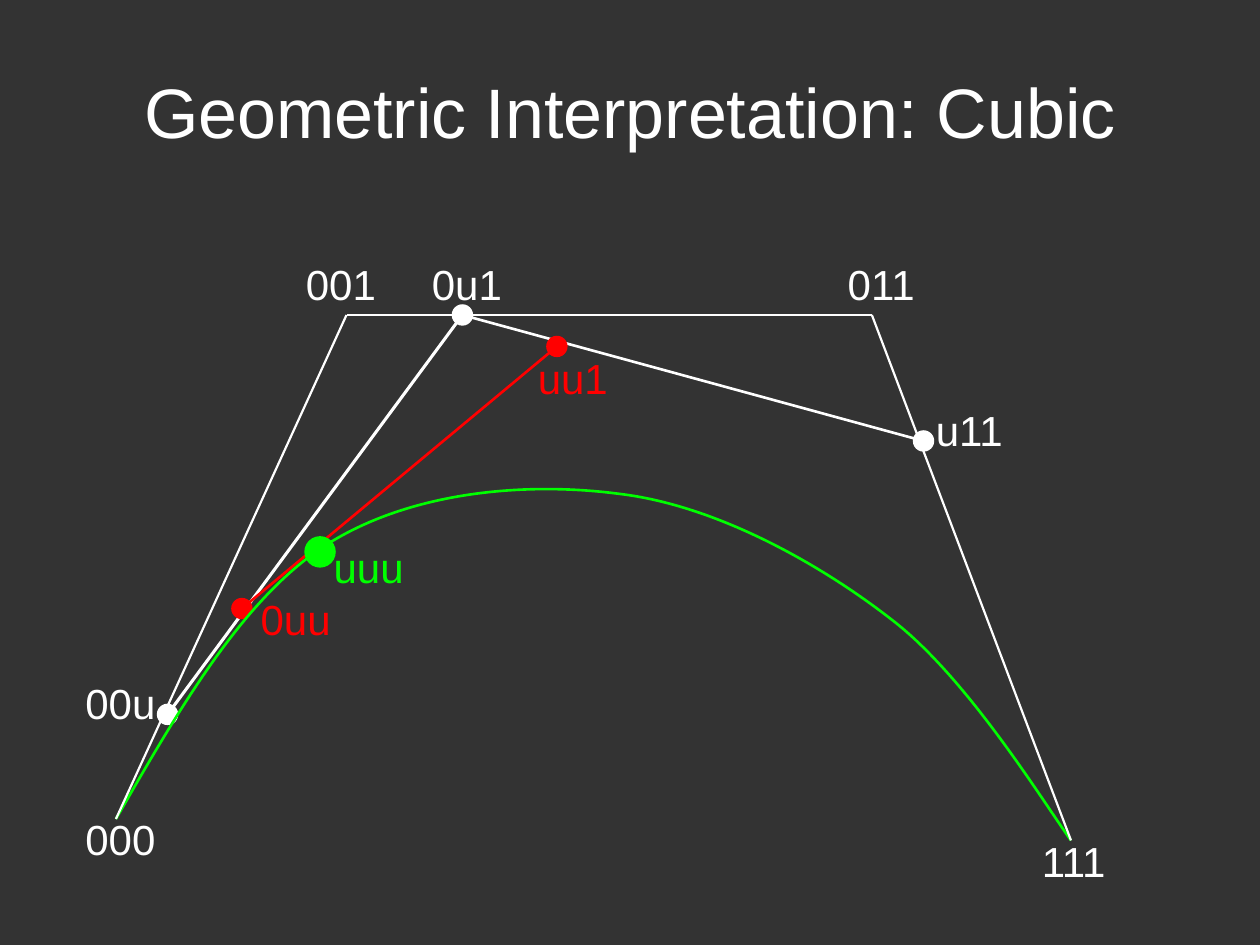
import pptx
import pptx.util
import pptx.dml.color
import pptx.enum.shapes
import pptx.enum.text
import pptx.oxml.ns
import lxml.etree

WHITE, RED, GREEN, DARK = "FFFFFF", "FF0000", "00FF00", "333333"
FONT = "Arial"
TITLE = "Geometric Interpretation: Cubic"

# Blossom points of the cubic, in inches
PTS = {
    "000": (0.92, 6.5), "001": (2.75, 2.5), "011": (6.92, 2.5), "111": (8.5, 6.67),
    "00u": (1.33, 5.67), "0u1": (3.67, 2.5), "u11": (7.33, 3.5),
    "0uu": (1.92, 4.83), "uu1": (4.42, 2.75), "uuu": (2.54, 4.38),
}

# Left top corner of each label
TAGS = {
    "000": (0.58, 6.41), "001": (2.33, 2), "011": (6.63, 2), "111": (8.17, 6.58),
    "00u": (0.58, 5.33), "0u1": (3.33, 2), "u11": (7.33, 3.16),
    "0uu": (1.97, 4.66), "uu1": (4.17, 2.75), "uuu": (2.55, 4.25),
}

# Start point, then two handles and an end for each Bezier piece
CURVE = [
    PTS["000"],
    (1.42, 5.63), (1.92, 4.76), (2.58, 4.33),
    (3.25, 3.9), (4.17, 3.82), (4.92, 3.92),
    (5.67, 4.01), (6.49, 4.46), (7.08, 4.92),
    (7.68, 5.38), (8.29, 6.38), PTS["111"],
]

# Levels from back to front: names, colour, line widths, dot size
LEVELS = [
    (["00u", "0u1", "u11"], WHITE, [1.75, 1.5], 0.17),
    (["0uu", "uu1"], RED, [1.5], 0.17),
    (["uuu"], GREEN, [], 0.25),
    (["000", "001", "011", "111"], WHITE, [1.25] * 3, 0),
]

inch = pptx.util.Inches
qn = pptx.oxml.ns.qn


def rgb(hue):
    return pptx.dml.color.RGBColor.from_string(hue)


def add_text(slide, text, box, size, hue, title=False):
    frame = slide.shapes.add_textbox(*map(inch, box)).text_frame
    frame.word_wrap = title
    para = frame.paragraphs[0]
    if title:
        frame.vertical_anchor = pptx.enum.text.MSO_ANCHOR.MIDDLE
        para.alignment = pptx.enum.text.PP_ALIGN.CENTER
    run = para.add_run()
    run.text = text
    run.font.name = FONT
    run.font.size = pptx.util.Pt(size)
    run.font.color.rgb = rgb(hue)


def add_line(slide, start, end, hue, width):
    line = slide.shapes.add_connector(
        pptx.enum.shapes.MSO_CONNECTOR.STRAIGHT, *map(inch, start + end))
    line.line.color.rgb = rgb(hue)
    line.line.width = pptx.util.Pt(width)
    lxml.etree.SubElement(line._element.spPr, qn("a:effectLst"))


def add_dot(slide, mid, size, hue):
    x, y = mid
    dot = slide.shapes.add_shape(
        pptx.enum.shapes.MSO_SHAPE.OVAL,
        *map(inch, (x - size / 2, y - size / 2, size, size)))
    dot.shadow.inherit = False
    dot.fill.solid()
    dot.fill.fore_color.rgb = rgb(hue)
    dot.line.fill.background()


def add_curve(slide, pts, hue, width):
    # The pen keeps whole units only, so it works in EMU
    start, *rest = [(inch(x), inch(y)) for x, y in pts]
    pen = slide.shapes.build_freeform(*start)
    pen.add_line_segments(rest, close=False)
    curve = pen.convert_to_shape()
    curve.shadow.inherit = False
    curve.fill.background()
    curve.line.color.rgb = rgb(hue)
    curve.line.width = pptx.util.Pt(width)
    # Turn each three straight steps into one Bezier piece
    steps = list(curve._element.iter(qn("a:lnTo")))
    for i in range(0, len(steps), 3):
        piece = lxml.etree.Element(qn("a:cubicBezTo"))
        steps[i].addprevious(piece)
        for step in steps[i:i + 3]:
            piece.append(step[0])
            step.getparent().remove(step)


def main():
    deck = pptx.Presentation()
    deck.slide_width, deck.slide_height = inch(10), inch(7.5)
    slide = deck.slides.add_slide(deck.slide_layouts[6])
    slide.background.fill.solid()
    slide.background.fill.fore_color.rgb = rgb(DARK)

    add_text(slide, TITLE, (0.75, 0.42, 8.5, 0.92), 40, WHITE, title=True)

    for names, hue, widths, size in LEVELS:
        # Lines between neighbours, or the curve for the last point
        for a, b, width in zip(names, names[1:], widths):
            add_line(slide, PTS[a], PTS[b], hue, width)
        if names == ["uuu"]:
            add_curve(slide, CURVE, hue, 1.5)
        # Dots and labels
        for name in names:
            if size:
                add_dot(slide, PTS[name], size, hue)
            add_text(slide, name, TAGS[name] + (0.76, 0.5), 24, hue)

    deck.save("out.pptx")


if __name__ == "__main__":
    main()
